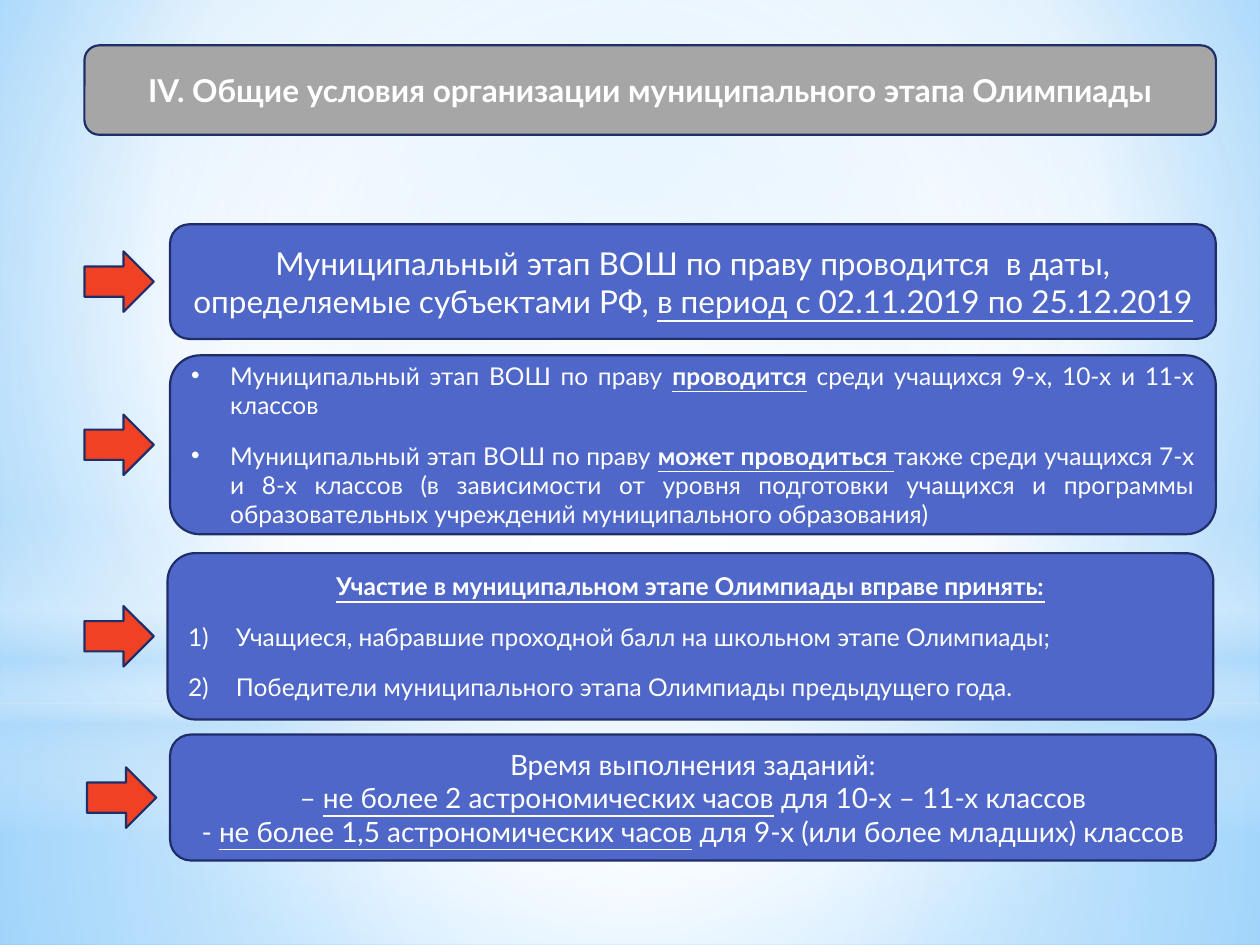
from lxml import etree
from pptx import Presentation
from pptx import util as u
from pptx.dml.color import RGBColor
from pptx.enum import shapes, text
from pptx.oxml.ns import qn

FONT = "Lato"
WHITE, GREY, BLUE, RED, NAVY = "FFFFFF", "A6A6A6", "4E67C8", "F14124", "1F2E69"
PALE = "B4DCFA"
CENTRE = (50, 50, 50, 50)
SHAPE = shapes.MSO_SHAPE
ALIGN = text.PP_ALIGN

BACKGROUND = [(0, "9ED5FF", 100), (60, WHITE, 100), (100, "5BB9FF", 100)]
GLOWS = [
    (SHAPE.RECTANGLE, 5.58, 1.92, [(0, WHITE, 91), (37, WHITE, 76), (100, PALE, 79)], CENTRE),
    (SHAPE.RECTANGLE, 0, 5.58, [(0, WHITE, 89), (48, WHITE, 62), (100, PALE, 79)], CENTRE),
    (SHAPE.RECTANGLE, 4.12, 2.5, [(0, WHITE, 0), (29, WHITE, 30), (45, PALE, 40),
                                  (55, WHITE, 26), (65, PALE, 60), (100, WHITE, 0)], None),
    (SHAPE.OVAL, 1.75, 5.58, [(0, WHITE, 100), (56, WHITE, 0)], CENTRE),
]

TITLE = [(ALIGN.CENTER, None, [("IV. Общие условия организации муниципального этапа Олимпиады", "b")])]
DATES = [(ALIGN.CENTER, None, [
    ("Муниципальный этап ВОШ по праву проводится  в даты, определяемые субъектами РФ, ", ""),
    ("в период с 02.11.2019 по 25.12.2019", "u")])]
GRADES = [
    (ALIGN.JUSTIFY, "•", [
        ("Муниципальный этап ВОШ по праву ", ""), ("проводится", "bu"),
        (" среди учащихся 9-х, 10-х и 11-х классов", "")]),
    (ALIGN.JUSTIFY, "•", [
        ("Муниципальный этап ВОШ по праву ", ""), ("может проводиться ", "bu"),
        ("также среди учащихся 7-х и 8-х классов (в зависимости от уровня подготовки учащихся "
         "и программы образовательных учреждений муниципального образования)", "")]),
]
MEMBERS = [
    (ALIGN.CENTER, None, [("Участие в муниципальном этапе Олимпиады вправе принять:", "bu")]),
    (ALIGN.JUSTIFY, "1)", [("Учащиеся, набравшие проходной балл на школьном этапе Олимпиады;", "")]),
    (ALIGN.JUSTIFY, "1)", [("Победители муниципального этапа Олимпиады предыдущего года.", "")]),
]
DURATION = [
    (ALIGN.CENTER, None, [("Время выполнения заданий:", "")]),
    (ALIGN.CENTER, None, [("– ", ""), ("не более 2 астрономических часов", "u"),
                          (" для 10-х – 11-х классов", "")]),
    (ALIGN.CENTER, None, [("- ", ""), ("не более 1,5 астрономических часов", "u"),
                          (" для 9-х (или более младших) классов", "")]),
]
ROWS = [
    (0.67, 1.35, 1.78, 0.91, DATES, 18, 0),
    (0.67, 1.35, 2.82, 1.42, GRADES, 14, 6),
    (0.67, 1.33, 4.39, 1.32, MEMBERS, 14, 6),
    (0.69, 1.35, 5.83, 1.0, DURATION, 16, 0),
]


def color(value):
    """Turn a hex string into a colour."""
    return RGBColor.from_string(value)


def set_gradient(solid, stops, focus):
    """Replace a solid fill element by a gradient, radial if it has a focus."""
    gradient = etree.Element(qn("a:gradFill"), rotWithShape="1")
    stop_list = etree.SubElement(gradient, qn("a:gsLst"))
    for position, value, opacity in stops:
        stop = etree.SubElement(stop_list, qn("a:gs"), pos=str(position * 1000))
        tint = etree.SubElement(stop, qn("a:srgbClr"), val=value)
        if opacity < 100:
            etree.SubElement(tint, qn("a:alpha"), val=str(opacity * 1000))
    if focus:
        radial = etree.SubElement(gradient, qn("a:path"), {"path": "circle"})
        sides = {side: str(share * 1000) for side, share in zip("ltrb", focus)}
        etree.SubElement(radial, qn("a:fillToRect"), sides)
    else:
        etree.SubElement(gradient, qn("a:lin"), ang="5400000", scaled="0")
    solid.getparent().replace(solid, gradient)


def add_shape(slide, kind, box, fill):
    """Add a shadowless filled shape."""
    shape = slide.shapes.add_shape(kind, *(u.Inches(length) for length in box))
    shape.shadow.inherit = False
    shape.fill.solid()
    shape.fill.fore_color.rgb = color(fill)
    shape.line.color.rgb = color(NAVY)
    shape.line.width = u.Pt(1.25)
    return shape


def add_backdrop(slide, width):
    """Paint the background and its translucent glows."""
    slide.background.fill.solid()
    solid = slide.element.xpath(".//p:bgPr/a:solidFill")[0]
    set_gradient(solid, BACKGROUND, (20, 10, 20, 60))
    for kind, top, height, stops, focus in GLOWS:
        shape = add_shape(slide, kind, (0, top, width, height), WHITE)
        shape.line.fill.background()
        set_gradient(shape.element.spPr.find(qn("a:solidFill")), stops, focus)


def set_bullet(paragraph, bullet):
    """Give a paragraph a dot or a number with a hanging indent."""
    indent = u.Inches(0.31 if bullet == "•" else 0.38)
    properties = paragraph._p.get_or_add_pPr()
    properties.set("marL", str(indent))
    properties.set("indent", str(-indent))
    if bullet == "•":
        etree.SubElement(properties, qn("a:buFont"), typeface="Arial")
        etree.SubElement(properties, qn("a:buChar"), char=bullet)
    else:
        etree.SubElement(properties, qn("a:buFont"), typeface="+mj-lt")
        etree.SubElement(properties, qn("a:buAutoNum"), type="arabicParenR")


def add_card(slide, box, fill, paragraphs, size, spacing=0):
    """Add a rounded card with formatted paragraphs."""
    frame = add_shape(slide, SHAPE.ROUNDED_RECTANGLE, box, fill).text_frame
    frame.word_wrap = True
    frame.vertical_anchor = text.MSO_ANCHOR.MIDDLE
    for index, (alignment, bullet, runs) in enumerate(paragraphs):
        paragraph = frame.add_paragraph() if index else frame.paragraphs[0]
        paragraph.alignment = alignment
        paragraph.space_before = paragraph.space_after = u.Pt(spacing)
        if bullet:
            set_bullet(paragraph, bullet)
        for wording, style in runs:
            run = paragraph.add_run()
            run.text = wording
            run.font.name = FONT
            run.font.size = u.Pt(size)
            run.font.bold = "b" in style
            run.font.underline = "u" in style
            run.font.color.rgb = color(WHITE)


def add_row(slide, arrow_left, left, top, height, paragraphs, size, spacing):
    """Add a card with an arrow centred beside it."""
    add_card(slide, (left, top, 8.3, height), BLUE, paragraphs, size, spacing)
    arrow_box = (arrow_left, top + (height - 0.48) / 2, 0.55, 0.48)
    add_shape(slide, SHAPE.RIGHT_ARROW, arrow_box, RED)


def main():
    """Build and save the presentation."""
    presentation = Presentation()
    presentation.slide_width = u.Inches(10)
    presentation.slide_height = u.Inches(7.5)
    slide = presentation.slides.add_slide(presentation.slide_layouts[6])
    add_backdrop(slide, 10)
    add_card(slide, (0.67, 0.36, 8.98, 0.71), GREY, TITLE, 18)
    for row in ROWS:
        add_row(slide, *row)
    presentation.save("out.pptx")


if __name__ == "__main__":
    main()
